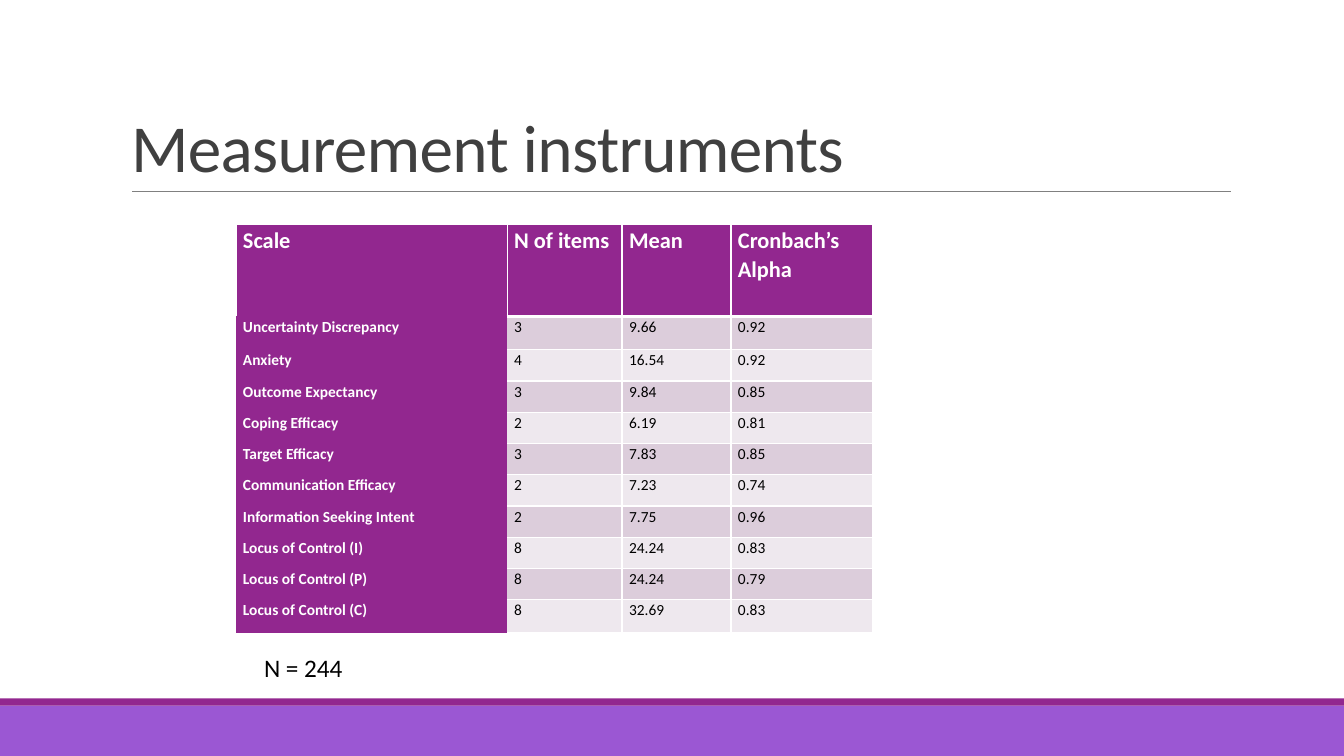
from pptx import Presentation
from pptx.dml.color import RGBColor
from pptx.enum.shapes import MSO_CONNECTOR as CONNECTOR, MSO_SHAPE as SHAPE
from pptx.enum.text import MSO_ANCHOR as ANCHOR, MSO_AUTO_SIZE as FIT, PP_ALIGN as ALIGN
from pptx.oxml.ns import qn
from pptx.util import Inches, Pt
from lxml.etree import SubElement

PLUM = RGBColor(0x92, 0x27, 0x8F)
VIOLET = RGBColor(0x9B, 0x57, 0xD3)
BAND_DARK = RGBColor(0xDC, 0xCD, 0xDB)
BAND_LIGHT = RGBColor(0xEE, 0xE8, 0xEE)
CHARCOAL = RGBColor(0x40, 0x40, 0x40)
GREY = RGBColor(0x80, 0x80, 0x80)
WHITE = RGBColor(0xFF, 0xFF, 0xFF)
BLACK = RGBColor(0, 0, 0)
NO_STYLE = "{2D5ABB26-0587-4C30-8999-92F81FD0307C}"


def add_text(paragraph, text, size, color, bold=False):
    run = paragraph.add_run()
    run.text = text
    run.font.name = "Calibri"
    run.font.size = Pt(size)
    run.font.color.rgb = color
    run.font.bold = bold
    return run


def set_borders(cell, widths):
    """Draw white cell edges; a width of 0 leaves the edge out."""
    properties = cell._tc.get_or_add_tcPr()
    for side in "LRTB":
        width = widths.get(side, 0)
        edge = SubElement(properties, qn(f"a:ln{side}"), w=str(Pt(width)))
        if width:
            fill = SubElement(edge, qn("a:solidFill"))
            SubElement(fill, qn("a:srgbClr"), val=str(WHITE))
        else:
            SubElement(edge, qn("a:noFill"))


prs = Presentation()
prs.slide_width, prs.slide_height = Inches(13.33), Inches(7.5)
slide = prs.slides.add_slide(prs.slide_layouts[5])

# Footer bands
for top, height, color in [(7, 0.5, VIOLET), (6.93, 0.07, PLUM)]:
    band = slide.shapes.add_shape(SHAPE.RECTANGLE, 0, Inches(top),
                                  prs.slide_width, Inches(height))
    band.shadow.inherit = False
    band.fill.solid()
    band.fill.fore_color.rgb = color
    band.line.fill.background()

# Rule under the title
rule = slide.shapes.add_connector(CONNECTOR.STRAIGHT, Inches(1.31), Inches(1.9),
                                  Inches(12.21), Inches(1.9))
rule.line.color.rgb = GREY
rule.line.width = Pt(0.5)
SubElement(rule._element.spPr, qn("a:effectLst"))

# Title
title = slide.shapes.title
title.left, title.top = Inches(1.2), Inches(0.31)
title.width, title.height = Inches(11), Inches(1.59)
title.text_frame.auto_size = FIT.NONE
title.text_frame.vertical_anchor = ANCHOR.BOTTOM
heading = title.text_frame.paragraphs[0]
heading.alignment = ALIGN.LEFT
heading.line_spacing = 0.85
heading_run = add_text(heading, "Measurement instruments", 48, CHARCOAL)
heading_run.font._element.set("spc", "-50")

# Table of scales
scales = [
    ("Scale", "N of items", "Mean", "Cronbach’s\nAlpha"),
    ("Uncertainty Discrepancy", "3", "9.66", "0.92"),
    ("Anxiety", "4", "16.54", "0.92"),
    ("Outcome Expectancy", "3", "9.84", "0.85"),
    ("Coping Efficacy", "2", "6.19", "0.81"),
    ("Target Efficacy", "3", "7.83", "0.85"),
    ("Communication Efficacy", "2", "7.23", "0.74"),
    ("Information Seeking Intent", "2", "7.75", "0.96"),
    ("Locus of Control (I)", "8", "24.24", "0.83"),
    ("Locus of Control (P)", "8", "24.24", "0.79"),
    ("Locus of Control (C)", "8", "32.69", "0.83"),
]
column_widths = [2.69, 1.14, 1.08, 1.4]
row_heights = [0.91, 0.33] + [0.31] * 8 + [0.33]
frame = slide.shapes.add_table(len(scales), len(column_widths), Inches(2.34), Inches(2.23),
                               Inches(sum(column_widths)), Inches(sum(row_heights)))
table = frame.table
table._tbl.tblPr.find(qn("a:tableStyleId")).text = NO_STYLE
for column, width in zip(table.columns, column_widths):
    column.width = Inches(width)

for r, (scale, height) in enumerate(zip(scales, row_heights)):
    table.rows[r].height = Inches(height)
    for c, value in enumerate(scale):
        cell = table.cell(r, c)
        is_heading = r == 0 or c == 0
        if r == 0:
            set_borders(cell, {"L": 1, "R": 1, "T": 1, "B": 3 if c else 0})
        elif c == 0:
            set_borders(cell, {})
        else:
            set_borders(cell, {"L": 1 if c > 1 else 0, "R": 1, "T": 3 if r == 1 else 1, "B": 1})
        cell.fill.solid()
        cell.fill.fore_color.rgb = PLUM if is_heading else BAND_DARK if r % 2 else BAND_LIGHT
        cell.margin_left = cell.margin_right = Inches(0.07)
        cell.margin_top = cell.margin_bottom = 0
        for i, line in enumerate(value.split("\n")):
            paragraph = cell.text_frame.add_paragraph() if i else cell.text_frame.paragraphs[0]
            paragraph.line_spacing = 1.07
            add_text(paragraph, line, 11 if r else 16, WHITE if is_heading else BLACK, is_heading)

# Sample size
sample = slide.shapes.add_textbox(Inches(2.52), Inches(6.42), Inches(0.99), Inches(0.4))
sample.text_frame.word_wrap = False
sample.text_frame.auto_size = FIT.SHAPE_TO_FIT_TEXT
add_text(sample.text_frame.paragraphs[0], "N = 244", 18, BLACK)

prs.save("out.pptx")
